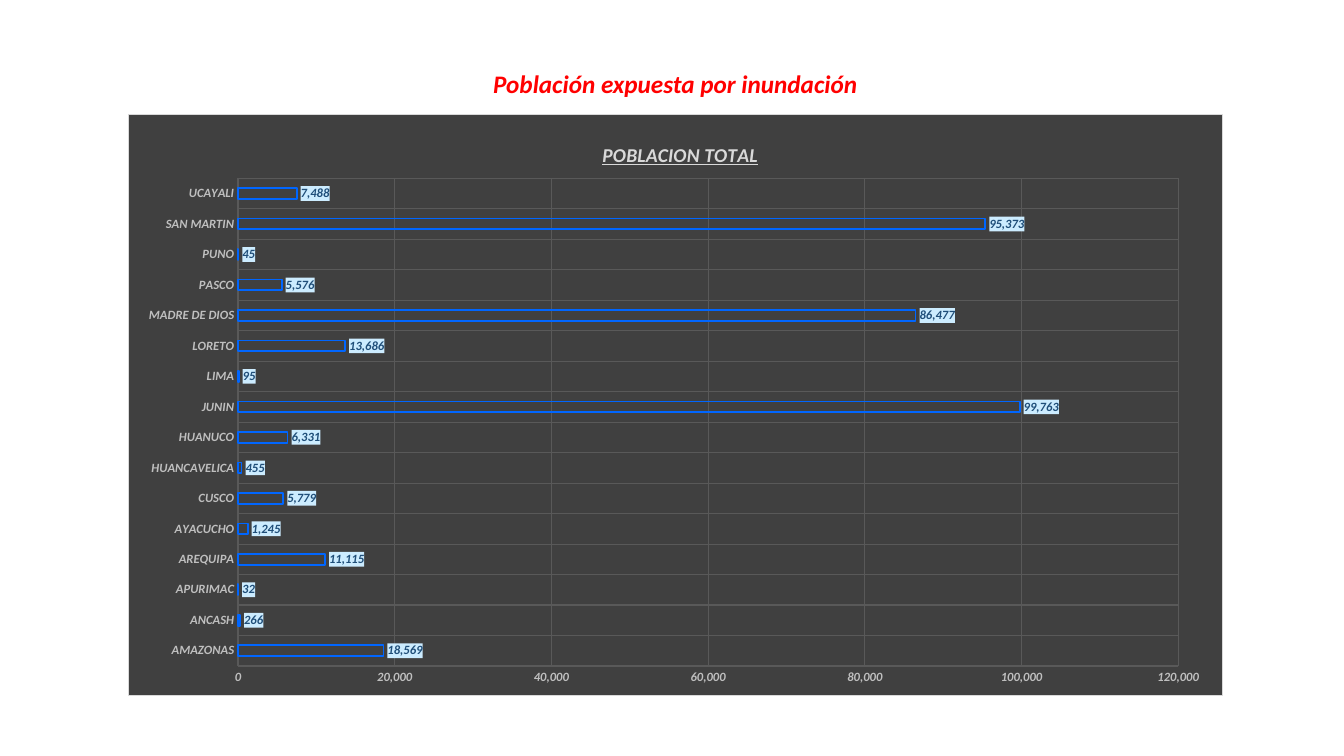
"""Build a slide with a bar chart of the population exposed to floods by region."""
import dataclasses

import lxml.etree
import pptx
import pptx.chart.data
import pptx.dml.color
import pptx.enum.chart
import pptx.enum.text
import pptx.oxml
import pptx.oxml.ns
import pptx.util

Cm = pptx.util.Cm
Pt = pptx.util.Pt
qn = pptx.oxml.ns.qn


@dataclasses.dataclass(frozen=True)
class Theme:
    font: str = "Calibri"
    heading: str = "FF0000"
    panel: str = "404040"
    border: str = "D9D9D9"
    grid: str = "595959"
    chart_title: str = "D9D9D9"
    axis_text: str = "BFBFBF"
    bar_line: str = "0066FF"
    label_text: str = "1F4E79"
    label_fill: str = "CCECFF"
    heading_size: int = 18
    chart_title_size: int = 14
    chart_size: int = 10
    label_size: int = 9
    thin: float = 0.75
    bar_width: float = 1.25


THEME = Theme()

POPULATION = {
    "AMAZONAS": 18569,
    "ANCASH": 266,
    "APURIMAC": 32,
    "AREQUIPA": 11115,
    "AYACUCHO": 1245,
    "CUSCO": 5779,
    "HUANCAVELICA": 455,
    "HUANUCO": 6331,
    "JUNIN": 99763,
    "LIMA": 95,
    "LORETO": 13686,
    "MADRE DE DIOS": 86477,
    "PASCO": 5576,
    "PUNO": 45,
    "SAN MARTIN": 95373,
    "UCAYALI": 7488,
}


def style_font(font, size, color):
    font.name = THEME.font
    font.size = Pt(size)
    font.bold = font.italic = True
    font.color.rgb = pptx.dml.color.RGBColor.from_string(color)


def style_line(line, color, width):
    line.color.rgb = pptx.dml.color.RGBColor.from_string(color)
    line.width = Pt(width)


def shape_properties(fill, border=None):
    """Return a chart spPr element with a solid fill and an optional border."""
    outline = "<a:ln><a:noFill/></a:ln>"
    if border:
        outline = (f'<a:ln w="{Pt(THEME.thin)}"><a:solidFill>'
                   f'<a:srgbClr val="{border}"/></a:solidFill></a:ln>')
    return pptx.oxml.parse_xml(
        f'<c:spPr {pptx.oxml.ns.nsdecls("c", "a")}><a:solidFill>'
        f'<a:srgbClr val="{fill}"/></a:solidFill>{outline}</c:spPr>')


def set_layout(element, index, **settings):
    """Give a chart part a manual layout, in fractions of the chart."""
    for old in element.findall(qn("c:layout")):
        element.remove(old)
    layout = element.makeelement(qn("c:layout"))
    manual = lxml.etree.SubElement(layout, qn("c:manualLayout"))
    for name, value in settings.items():
        lxml.etree.SubElement(manual, qn(f"c:{name}")).set("val", str(value))
    element.insert(index, layout)


def add_heading(page, text):
    box = page.shapes.add_textbox(Cm(12.12), Cm(1.6), Cm(9.8), Cm(1.02))
    frame = box.text_frame
    frame.word_wrap = False
    frame.auto_size = pptx.enum.text.MSO_AUTO_SIZE.SHAPE_TO_FIT_TEXT
    frame.text = text
    para = frame.paragraphs[0]
    para.alignment = pptx.enum.text.PP_ALIGN.CENTER
    style_font(para.runs[0].font, THEME.heading_size, THEME.heading)


def style_axis(axis):
    axis.major_tick_mark = pptx.enum.chart.XL_TICK_MARK.NONE
    axis.minor_tick_mark = pptx.enum.chart.XL_TICK_MARK.NONE
    axis.has_major_gridlines = True
    style_line(axis.major_gridlines.format.line, THEME.grid, THEME.thin)
    axis.format.line.fill.background()
    style_font(axis.tick_labels.font, THEME.label_size, THEME.axis_text)


def style_title(chart, text):
    chart.has_title = True
    title = chart.chart_title
    title.include_in_layout = False
    title.text_frame.text = text
    font = title.text_frame.paragraphs[0].runs[0].font
    style_font(font, THEME.chart_title_size, THEME.chart_title)
    font.underline = True
    set_layout(title._element, 1, xMode="edge", yMode="edge", x=0.43, y=0.04)


def style_bars(plot):
    plot.gap_width = 182
    plot.overlap = -50
    plot.vary_by_categories = False
    series = plot.series[0]
    series.format.fill.background()
    style_line(series.format.line, THEME.bar_line, THEME.bar_width)
    labels = series.data_labels
    labels.show_value = True
    labels.position = pptx.enum.chart.XL_LABEL_POSITION.OUTSIDE_END
    labels.number_format = "#,##0"
    labels.number_format_is_linked = False
    style_font(labels.font, THEME.label_size, THEME.label_text)
    labels._element.find(qn("c:txPr")).addprevious(
        shape_properties(THEME.label_fill))


def add_population_chart(page, title, population):
    data = pptx.chart.data.CategoryChartData(number_format="#,##0")
    data.categories = list(population)
    data.add_series("Series 1", list(population.values()))
    chart = page.shapes.add_chart(
        pptx.enum.chart.XL_CHART_TYPE.BAR_CLUSTERED,
        Cm(3.23), Cm(2.87), Cm(27.58), Cm(14.66), data).chart
    chart.has_legend = False
    chart.font.name = THEME.font
    chart.font.size = Pt(THEME.chart_size)
    style_title(chart, title)
    style_axis(chart.category_axis)
    style_axis(chart.value_axis)
    chart.value_axis.minimum_scale = 0
    chart.value_axis.maximum_scale = 120000
    chart.value_axis.major_unit = 20000
    chart.value_axis.tick_labels.number_format = "#,##0"
    chart.value_axis.tick_labels.number_format_is_linked = False
    style_bars(chart.plots[0])
    space = chart._chartSpace
    space.find(qn("c:txPr")).addprevious(
        shape_properties(THEME.panel, THEME.border))
    set_layout(space.find(f'{qn("c:chart")}/{qn("c:plotArea")}'), 0,
               layoutTarget="inner", xMode="edge", yMode="edge",
               x=0.1, y=0.11, w=0.86, h=0.84)


def main():
    deck = pptx.Presentation()
    deck.slide_width, deck.slide_height = Cm(33.87), Cm(19.05)
    page = deck.slides.add_slide(deck.slide_layouts[6])
    add_heading(page, "Población expuesta por inundación")
    add_population_chart(page, "POBLACION TOTAL", POPULATION)
    deck.save("out.pptx")


if __name__ == "__main__":
    main()
